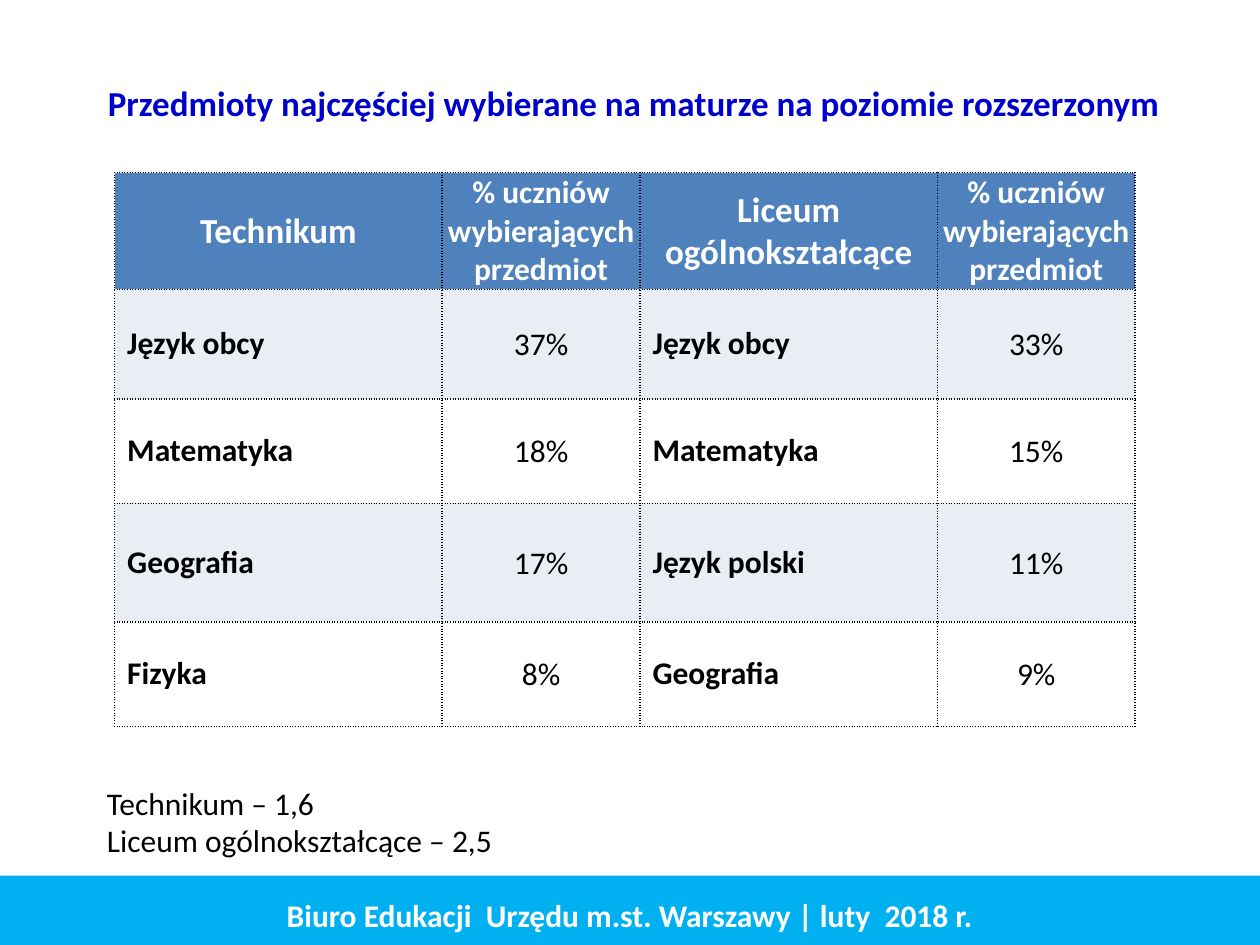
from lxml import etree
from pptx import Presentation
from pptx.dml.color import RGBColor
from pptx.enum.shapes import MSO_SHAPE
from pptx.enum.text import MSO_ANCHOR, PP_ALIGN
from pptx.oxml.ns import qn
from pptx.util import Inches, Pt

LEFT, CENTER = PP_ALIGN.LEFT, PP_ALIGN.CENTER
TOP, MIDDLE = MSO_ANCHOR.TOP, MSO_ANCHOR.MIDDLE
RECT = MSO_SHAPE.RECTANGLE
TITLE_ONLY = 5

BLACK = RGBColor(0x00, 0x00, 0x00)
WHITE = RGBColor(0xFF, 0xFF, 0xFF)
NAVY = RGBColor(0x00, 0x00, 0xCC)
HEADER = RGBColor(0x4F, 0x81, 0xBD)
BAND = RGBColor(0xE9, 0xED, 0xF4)
SKY = RGBColor(0x00, 0xB0, 0xF0)

COL_WIDTHS = [2.6, 1.57, 2.36, 1.57]
ROW_HEIGHTS = [0.91, 0.87, 0.83, 0.94, 0.83]
SHARE = "% uczniów wybierających przedmiot"
ROWS = [
    ["Technikum", SHARE, "Liceum ogólnokształcące", SHARE],
    ["Język obcy", "37%", "Język obcy", "33%"],
    ["Matematyka", "18%", "Matematyka", "15%"],
    ["Geografia", "17%", "Język polski", "11%"],
    ["Fizyka", "8%", "Geografia", "9%"],
]


class SlideBuilder:
    font = "Calibri"

    def __init__(self, prs):
        self.slide = prs.slides.add_slide(prs.slide_layouts[TITLE_ONLY])

    def set_text(self, tf, text, size=18, color=BLACK, bold=False, align=LEFT):
        tf.text = text
        for p in tf.paragraphs:
            p.alignment = align
            for r in p.runs:
                r.font.name = self.font
                r.font.size = Pt(size)
                r.font.bold = bold
                r.font.color.rgb = color

    def title(self, text, left, top, width, height):
        sp = self.slide.shapes.title
        sp.left, sp.top = Inches(left), Inches(top)
        sp.width, sp.height = Inches(width), Inches(height)
        tf = sp.text_frame
        tf.word_wrap = False
        tf.vertical_anchor = TOP
        self.set_text(tf, text, 20, NAVY, True, CENTER)

    def text(self, text, left, top, width, height):
        sp = self.slide.shapes.add_textbox(
            Inches(left), Inches(top), Inches(width), Inches(height))
        sp.text_frame.word_wrap = True
        self.set_text(sp.text_frame, text)

    def bar(self, text, left, top, width, height):
        sp = self.slide.shapes.add_shape(
            RECT, Inches(left), Inches(top), Inches(width), Inches(height))
        sp.shadow.inherit = False
        sp.fill.solid()
        sp.fill.fore_color.rgb = SKY
        sp.line.fill.background()
        sp.text_frame.vertical_anchor = MIDDLE
        self.set_text(sp.text_frame, text, 18, WHITE, True, CENTER)

    def borders(self, cell):
        tc_pr = cell._tc.get_or_add_tcPr()
        for side in ("a:lnL", "a:lnR", "a:lnT", "a:lnB"):
            ln = etree.SubElement(tc_pr, qn(side), w=str(Pt(1)))
            fill = etree.SubElement(ln, qn("a:solidFill"))
            etree.SubElement(fill, qn("a:srgbClr"), val=str(BLACK))
            etree.SubElement(ln, qn("a:prstDash"), val="sysDot")

    def cell(self, cell, text, row, col):
        is_header = row == 0
        is_subject = col % 2 == 0
        self.borders(cell)
        cell.fill.solid()
        cell.fill.fore_color.rgb = HEADER if is_header else BAND if row % 2 else WHITE
        cell.vertical_anchor = MIDDLE
        if is_header or not is_subject:
            cell.margin_left = cell.margin_right = cell.margin_top = Inches(0.01)
            cell.margin_bottom = 0
        self.set_text(
            cell.text_frame, text,
            size=20 if is_header and is_subject else 18,
            color=WHITE if is_header else BLACK,
            bold=is_header or is_subject,
            align=CENTER if is_header or not is_subject else LEFT)

    def table(self, rows, left, top, widths, heights):
        table = self.slide.shapes.add_table(
            len(rows), len(widths), Inches(left), Inches(top),
            Inches(sum(widths)), Inches(sum(heights))).table
        for column, width in zip(table.columns, widths):
            column.width = Inches(width)
        for row, height in zip(table.rows, heights):
            row.height = Inches(height)
        for i, texts in enumerate(rows):
            for j, text in enumerate(texts):
                self.cell(table.cell(i, j), text, i, j)


def main():
    prs = Presentation()
    prs.slide_width, prs.slide_height = Inches(10), Inches(7.5)
    s = SlideBuilder(prs)
    s.title("Przedmioty najczęściej wybierane na maturze na poziomie rozszerzonym",
            0.7, 0.6, 8.66, 0.77)
    s.table(ROWS, 0.91, 1.37, COL_WIDTHS, ROW_HEIGHTS)
    s.text("Technikum – 1,6\nLiceum ogólnokształcące – 2,5", 0.75, 6.17, 4.52, 0.71)
    s.bar("Biuro Edukacji  Urzędu m.st. Warszawy | luty  2018 r.", 0, 6.95, 10, 0.63)
    prs.save("out.pptx")


if __name__ == "__main__":
    main()
